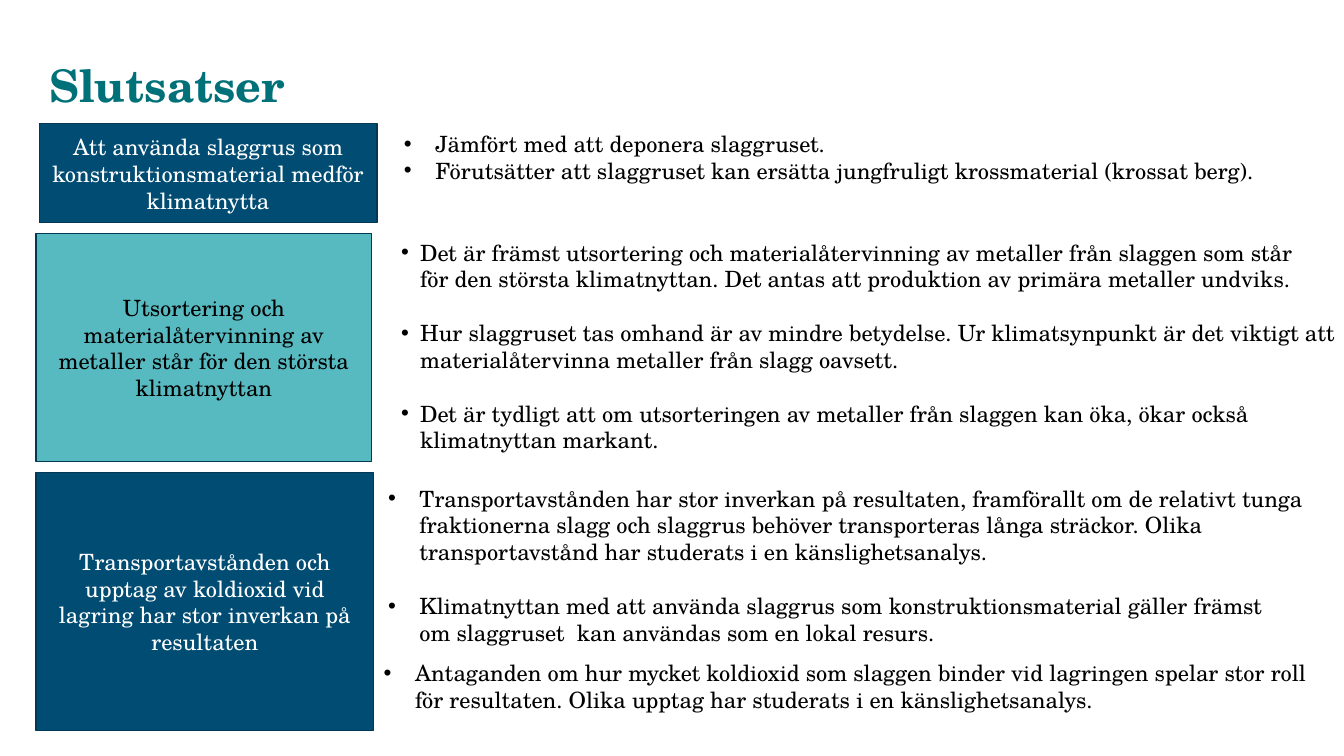
from pptx import Presentation
from pptx import util as u
from pptx.dml import color
from pptx.enum import shapes, text
from pptx.oxml import ns
from lxml import etree

FONT = "TeX Gyre Schola"
NAVY, TURQUOISE, TEAL, EDGE = "004C73", "58BAC1", "007079", "003855"
BLACK, WHITE = "000000", "FFFFFF"
LINE_PITCH = 19.1


def rgb(value):
    """Return the colour for a hex string."""
    return color.RGBColor.from_string(value)


def add_run(p, content, size, colour, bold=False):
    """Add one formatted run to a paragraph."""
    r = p.add_run()
    r.text = content
    r.font.name, r.font.size, r.font.bold = FONT, u.Pt(size), bold
    r.font.color.rgb = rgb(colour)


def add_title(s, box, content):
    """Place the slide heading in the box."""
    tf = s.shapes.add_textbox(*map(u.Cm, box)).text_frame
    tf.word_wrap = True
    tf.vertical_anchor = text.MSO_ANCHOR.MIDDLE
    p = tf.paragraphs[0]
    p.line_spacing = 0.9
    add_run(p, content, 32, TEAL, True)


def add_claim(group, box, content, fill, colour):
    """Draw the coloured rectangle that states a conclusion."""
    sp = group.shapes.add_shape(shapes.MSO_SHAPE.RECTANGLE, *map(u.Cm, box))
    sp.shadow.inherit = False
    sp.fill.solid()
    sp.fill.fore_color.rgb = rgb(fill)
    sp.line.color.rgb = rgb(EDGE)
    sp.line.width = u.Pt(1)
    tf = sp.text_frame
    tf.word_wrap = True
    tf.vertical_anchor = text.MSO_ANCHOR.MIDDLE
    p = tf.paragraphs[0]
    p.alignment = text.PP_ALIGN.CENTER
    add_run(p, content, 16, colour)


def add_bullets(group, box, indent, items):
    """Write bulleted paragraphs, each a list of lines, in the box."""
    tf = group.shapes.add_textbox(*map(u.Cm, box)).text_frame
    tf.word_wrap = True
    for i, (gap, lines) in enumerate(items):
        p = tf.paragraphs[0] if i == 0 else tf.add_paragraph()
        pPr = p._p.get_or_add_pPr()
        pPr.set("marL", str(u.Cm(indent)))
        pPr.set("indent", str(-u.Cm(indent)))
        etree.SubElement(pPr, ns.qn("a:buFont")).set("typeface", "Arial")
        etree.SubElement(pPr, ns.qn("a:buChar")).set("char", "•")
        if gap:
            p.space_before = u.Pt(gap)
        for j, line in enumerate(lines):
            if j:
                p.add_line_break()
            add_run(p, line, 16, BLACK)


def add_conclusion(s, box, claim, fill, colour, notes):
    """Group a claim filling the box with bullet lists offset from its corner."""
    left, top = box[:2]
    group = s.shapes.add_group_shape()
    add_claim(group, box, claim, fill, colour)
    for dx, dy, width, height, indent, items in notes:
        add_bullets(group, (left + dx, top + dy, width, height), indent, items)


CONCLUSIONS = [
    ((0.99, 3.12, 8.51, 2.49),
     "Att använda slaggrus som konstruktionsmaterial medför klimatnytta",
     NAVY, WHITE,
     [(8.94, 0.03, 26.97, 1.63, 0.79, [
         (0, ["Jämfört med att deponera slaggruset."]),
         (0, ["Förutsätter att slaggruset kan ersätta jungfruligt krossmaterial (krossat berg)."]),
     ])]),
    ((0.91, 5.89, 8.46, 5.74),
     "Utsortering och materialåtervinning av metaller står för den största klimatnyttan",
     TURQUOISE, BLACK,
     [(8.95, 0, 24.18, 5.74, 0.48, [
         (0, ["Det är främst utsortering och materialåtervinning av metaller från slaggen som står",
              "för den största klimatnyttan. Det antas att produktion av primära metaller undviks."]),
         (LINE_PITCH, ["Hur slaggruset tas omhand är av mindre betydelse. Ur klimatsynpunkt är det viktigt att "
                       "materialåtervinna metaller från slagg oavsett."]),
         (LINE_PITCH, ["Det är tydligt att om utsorteringen av metaller från slaggen kan öka, ökar också",
                       "klimatnyttan markant."]),
     ])]),
    ((0.91, 11.91, 8.51, 6.5),
     "Transportavstånden och upptag av koldioxid vid lagring har stor inverkan på resultaten",
     NAVY, WHITE,
     [(8.62, 0.18, 26.97, 5.74, 0.79, [
         (0, ["Transportavstånden har stor inverkan på resultaten, framförallt om de relativt tunga",
              "fraktionerna slagg och slaggrus behöver transporteras långa sträckor. Olika",
              "transportavstånd har studerats i en känslighetsanalys."]),
         (LINE_PITCH, ["Klimatnyttan med att använda slaggrus som konstruktionsmaterial gäller främst",
                       "om slaggruset  kan användas som en lokal resurs."]),
     ]), (8.51, 4.57, 26.97, 1.63, 0.79, [
         (0, ["Antaganden om hur mycket koldioxid som slaggen binder vid lagringen spelar stor roll",
              "för resultaten. Olika upptag har studerats i en känslighetsanalys."]),
     ])]),
]


def main():
    """Build the slide and save it."""
    prs = Presentation()
    prs.slide_width, prs.slide_height = u.Cm(33.87), u.Cm(19.05)
    s = prs.slides.add_slide(prs.slide_layouts[6])
    add_title(s, (0.99, 1.32, 19.48, 1.78), "Slutsatser")
    for conclusion in CONCLUSIONS:
        add_conclusion(s, *conclusion)
    prs.save("out.pptx")


if __name__ == "__main__":
    main()
